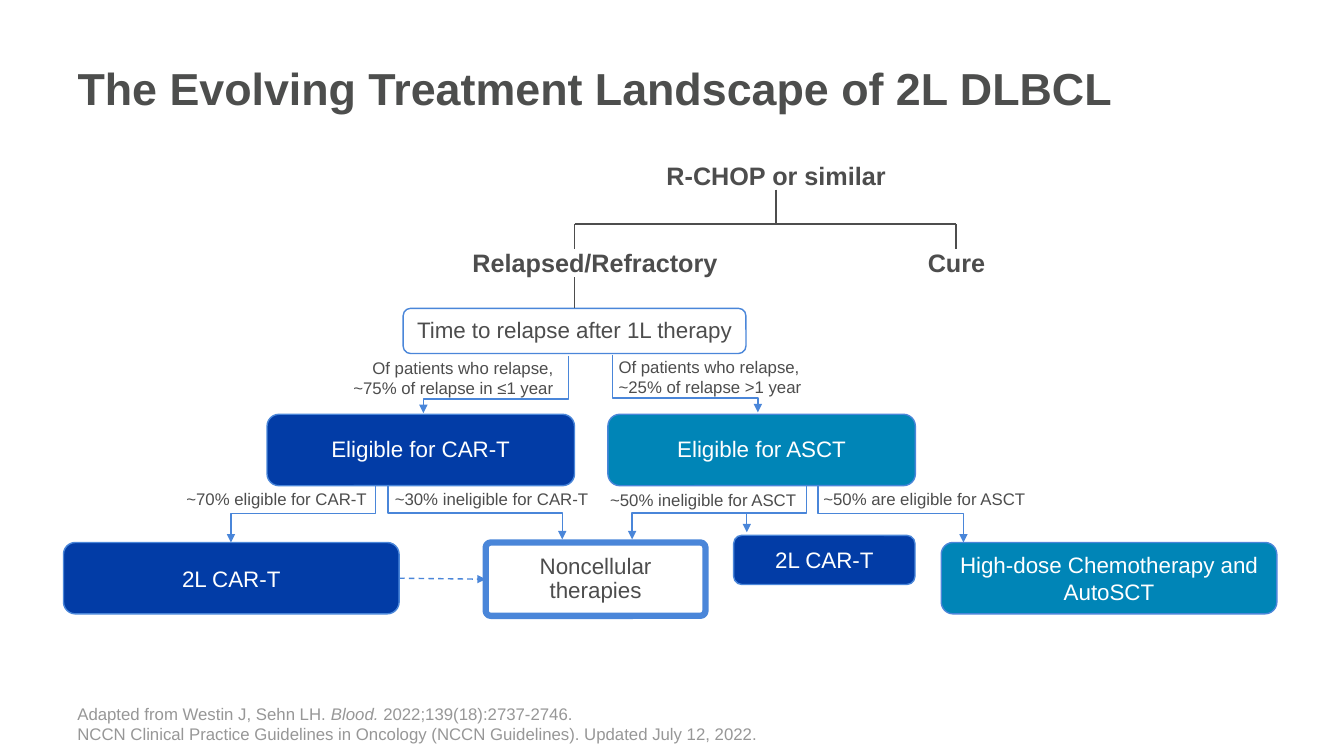
from pptx import Presentation
from pptx.dml.color import RGBColor
from pptx.enum.dml import MSO_LINE as Dash
from pptx.enum.shapes import MSO_CONNECTOR as Link, MSO_SHAPE as Form
from pptx.enum.text import MSO_ANCHOR as Anchor, PP_ALIGN as Align
from pptx.oxml.ns import qn
from pptx.util import Cm, Pt
from lxml.etree import SubElement

GRAY, EDGE, NAVY, TEAL = "4D4D4D", "4A86D9", "023CA6", "0085B7"
WHITE, PALE = "FFFFFF", "979797"

TITLE = "The Evolving Treatment Landscape of 2L DLBCL"
HEADS = [
    ("R-CHOP or similar", 16.08, 3.91, 6.96),
    ("Relapsed/Refractory", 11.3, 6.1, 7.39),
    ("Cure", 20.93, 6.1, 6.35),
]
STEMS = [
    (19.56, 4.78, 19.56, 5.64),
    (14.48, 5.64, 24.1, 5.64),
    (14.48, 5.64, 14.48, 6.27),
    (24.1, 5.64, 24.1, 6.27),
]
BOXES = {
    "time": ("Time to relapse after 1L therapy", 10.16, 7.77, 8.64, 1.14, None, 0.9),
    "cart": ("Eligible for CAR-T", 6.73, 10.44, 7.75, 1.8, NAVY, 0.9),
    "asct": ("Eligible for ASCT", 15.32, 10.44, 7.75, 1.8, TEAL, 0.9),
    "second": ("2L CAR-T", 1.6, 13.67, 8.46, 1.8, NAVY, 1.0),
    "other": ("Noncellular therapies", 12.24, 13.67, 5.54, 1.85, None, 0.9),
    "late": ("2L CAR-T", 18.49, 13.49, 4.57, 1.24, NAVY, 1.0),
    "auto": ("High-dose Chemotherapy and AutoSCT", 23.72, 13.67, 8.46, 1.8, TEAL, 1.0),
}
BENDS = [
    (14.33, 8.97, 10.67, 10.41, 75400),
    (15.44, 8.94, 19.1, 10.39, 75400),
    (9.47, 12.22, 5.82, 13.67, 50000),
    (9.78, 12.22, 14.17, 13.59, 51900),
    (20.32, 12.22, 15.93, 13.59, 51900),
    (20.62, 12.22, 24.28, 13.67, 50000),
]
NOTES = [
    ("Of patients who relapse,\v~75% of relapse in ≤1 year", 8.33, 8.89, 5.87, 1.27, Align.RIGHT),
    ("Of patients who relapse,\v~25% of relapse >1 year", 15.34, 8.86, 6.05, 1.27, Align.LEFT),
    ("~70% eligible for CAR-T", 4.01, 12.19, 5.49, 0.76, Align.RIGHT),
    ("~30% ineligible for CAR-T", 9.7, 12.19, 6.8, 0.76, Align.LEFT),
    ("~50% ineligible for ASCT", 13.46, 12.22, 6.86, 0.76, Align.RIGHT),
    ("~50% are eligible for ASCT", 20.5, 12.19, 6.05, 0.76, Align.LEFT),
]
SOURCES = [
    [("Adapted from Westin J, Sehn LH. ", False), ("Blood. ", True),
     ("2022;139(18):2737-2746.", False)],
    [("NCCN Clinical Practice Guidelines in Oncology (NCCN Guidelines). "
      "Updated July 12, 2022.", False)],
]

deck = Presentation()
deck.slide_width, deck.slide_height = Cm(33.87), Cm(19.05)
slide = deck.slides.add_slide(deck.slide_layouts[5])
shapes = slide.shapes


def tint(code):
    return RGBColor.from_string(code)


def style(para, size, color, align=Align.LEFT, bold=False):
    para.alignment = align
    font = para.font
    font.name, font.size, font.bold = "Arial", Pt(size), bold
    font.color.rgb = tint(color)


def label(text, x, y, w, h, size, color, align, bold=False):
    frame = shapes.add_textbox(Cm(x), Cm(y), Cm(w), Cm(h)).text_frame
    frame.word_wrap = True
    frame.text = text
    style(frame.paragraphs[0], size, color, align, bold)
    return frame


def link(x1, y1, x2, y2, color, width, kind=Link.STRAIGHT, arrow=False):
    line = shapes.add_connector(kind, Cm(x1), Cm(y1), Cm(x2), Cm(y2))
    line.line.color.rgb, line.line.width = tint(color), Pt(width)
    if arrow:
        SubElement(line.line._get_or_add_ln(), qn("a:tailEnd"), type="triangle")
    SubElement(line._element.spPr, qn("a:effectLst"))
    return line


def bend(x1, y1, x2, y2, turn):
    drop, span = y2 - y1, abs(x2 - x1)
    left = (x1 + x2 - drop) / 2
    top = (y1 + y2 - span) / 2
    ends = (left, left + drop)
    start, stop = ends if x2 < x1 else ends[::-1]
    line = link(start, top, stop, top + span, EDGE, 1, Link.ELBOW, True)
    props = line._element.spPr
    angle = 90 if x2 < x1 else 270
    props.find(qn("a:xfrm")).set("rot", str(angle * 60000))
    guides = props.find(qn("a:prstGeom")).find(qn("a:avLst"))
    SubElement(guides, qn("a:gd"), name="adj1", fmla=f"val {turn}")


def box(text, x, y, w, h, fill, gap):
    item = shapes.add_shape(Form.ROUNDED_RECTANGLE, Cm(x), Cm(y), Cm(w), Cm(h))
    item.shadow.inherit = False
    if fill:
        item.fill.solid()
        item.fill.fore_color.rgb = tint(fill)
    else:
        item.fill.background()
    item.line.color.rgb, item.line.width = tint(EDGE), Pt(1)
    frame = item.text_frame
    frame.word_wrap, frame.vertical_anchor = True, Anchor.MIDDLE
    frame.text = text
    para = frame.paragraphs[0]
    style(para, 16, WHITE if fill else GRAY, Align.CENTER)
    para.line_spacing = gap
    return item


title = shapes.title
title.left, title.top, title.width, title.height = Cm(1.7), Cm(0.56), Cm(29.85), Cm(3.3)
title.text_frame.text = TITLE
title.text_frame.vertical_anchor = Anchor.MIDDLE
style(title.text_frame.paragraphs[0], 32, "4D4E4D", bold=True)

for text, x, y, w in HEADS:
    label(text, x, y, w, 1.02, 18, GRAY, Align.CENTER, True)
for ends in STEMS:
    link(*ends, GRAY, 1.25)

made = {name: box(*spec) for name, spec in BOXES.items()}
made["other"].adjustments[0] = 0.07
made["other"].line.width = Pt(4.5)

link(14.48, 6.99, 14.48, 7.77, GRAY, 1.25).end_connect(made["time"], 0)
cross = link(10.06, 14.57, 12.24, 14.57, EDGE, 1, arrow=True)
cross.line.dash_style = Dash.DASH
cross.begin_connect(made["second"], 3)
cross.end_connect(made["other"], 1)
link(18.82, 12.95, 18.82, 13.41, EDGE, 0.5, arrow=True)

for ends in BENDS:
    bend(*ends)
for text, x, y, w, h, align in NOTES:
    label(text, x, y, w, h, 12, GRAY, align)

foot = label("", 1.7, 17.65, 29.85, 1.22, 12, PALE, Align.LEFT)
foot.vertical_anchor = Anchor.BOTTOM
foot.add_paragraph()
for para, parts in zip(foot.paragraphs, SOURCES):
    style(para, 12, PALE)
    for text, slant in parts:
        run = para.add_run()
        run.text, run.font.italic = text, slant

deck.save("out.pptx")
